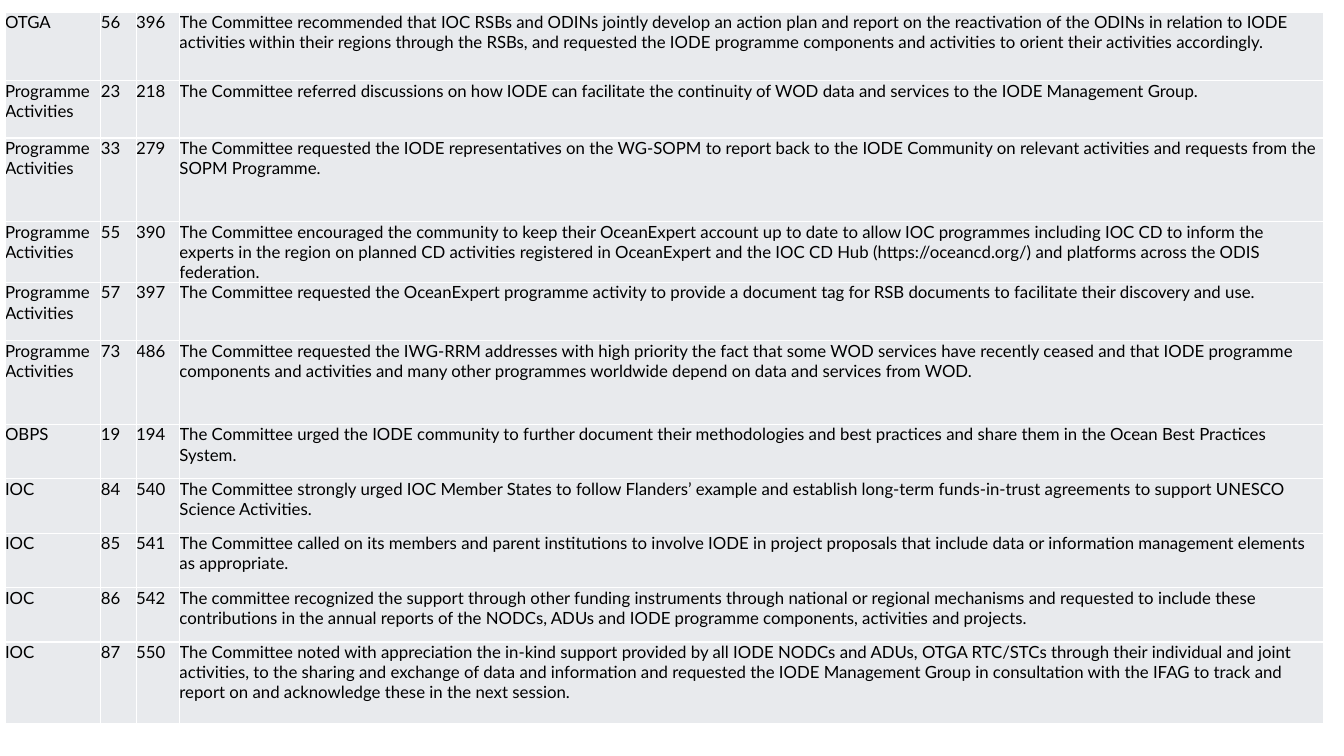
from lxml.etree import SubElement
from pptx import Presentation
from pptx.dml.color import RGBColor
from pptx.oxml.ns import qn
from pptx.util import Inches, Pt

WIDTHS = [0.95, 0.35, 0.43, 11.35]
ACTS = "Programme Activities"

# Row height, component, section, paragraph, decision
ROWS = [
    (0.68, "OTGA", 56, 396, "The Committee recommended that IOC RSBs and ODINs jointly develop an action plan and report on the reactivation of the ODINs in relation to IODE activities within their regions through the RSBs, and requested the IODE programme components and activities to orient their activities accordingly."),
    (0.57, ACTS, 23, 218, "The Committee referred discussions on how IODE can facilitate the continuity of WOD data and services to the IODE Management Group."),
    (0.83, ACTS, 33, 279, "The Committee requested the IODE representatives on the WG-SOPM to report back to the IODE Community on relevant activities and requests from the SOPM Programme."),
    (0.59, ACTS, 55, 390, "The Committee encouraged the community to keep their OceanExpert account up to date to allow IOC programmes including IOC CD to inform the experts in the region on planned CD activities registered in OceanExpert and the IOC CD Hub (https://oceancd.org/) and platforms across the ODIS federation."),
    (0.58, ACTS, 57, 397, "The Committee requested the OceanExpert programme activity to provide a document tag for RSB documents to facilitate their discovery and use."),
    (0.83, ACTS, 73, 486, "The Committee requested the IWG-RRM addresses with high priority the fact that some WOD services have recently ceased and that IODE programme components and activities and many other programmes worldwide depend on data and services from WOD."),
    (0.54, "OBPS", 19, 194, "The Committee urged the IODE community to further document their methodologies and best practices and share them in the Ocean Best Practices System."),
    (0.54, "IOC", 84, 540, "The Committee strongly urged IOC Member States to follow Flanders’ example and establish long-term funds-in-trust agreements to support UNESCO Science Activities."),
    (0.54, "IOC", 85, 541, "The Committee called on its members and parent institutions to involve IODE in project proposals that include data or information management elements as appropriate."),
    (0.54, "IOC", 86, 542, "The committee recognized the support through other funding instruments through national or regional mechanisms and requested to include these contributions in the annual reports of the NODCs, ADUs and IODE programme components, activities and projects."),
    (0.81, "IOC", 87, 550, "The Committee noted with appreciation the in-kind support provided by all IODE NODCs and ADUs, OTGA RTC/STCs through their individual and joint activities, to the sharing and exchange of data and information and requested the IODE Management Group in consultation with the IFAG to track and report on and acknowledge these in the next session."),
]


def paint(color, code):
    color.rgb = RGBColor.from_string(code)


def set_edges(cell, code):
    """Draw a 1 pt line on all four sides; call before filling the cell."""
    props = cell._tc.get_or_add_tcPr()
    for side in ("a:lnL", "a:lnR", "a:lnT", "a:lnB"):
        line = SubElement(props, qn(side), w=str(Pt(1)))
        fill = SubElement(line, qn("a:solidFill"))
        SubElement(fill, qn("a:srgbClr"), val=code)


deck = Presentation()
deck.slide_width, deck.slide_height = Inches(13.33), Inches(7.5)
slide = deck.slides.add_slide(deck.slide_layouts[6])

table = slide.shapes.add_table(
    len(ROWS), len(WIDTHS), Inches(0.05), Inches(0.12),
    Inches(sum(WIDTHS)), Inches(sum(row[0] for row in ROWS))).table
table.first_row = table.horz_banding = False
for column, width in zip(table.columns, WIDTHS):
    column.width = Inches(width)

for row, (height, *values) in zip(table.rows, ROWS):
    row.height = Inches(height)
    for cell, value in zip(row.cells, values):
        cell.margin_left = cell.margin_right = 0
        cell.margin_top = cell.margin_bottom = 0
        set_edges(cell, "FFFFFF")
        cell.fill.solid()
        paint(cell.fill.fore_color, "E8EAED")
        cell.text = str(value)
        font = cell.text_frame.paragraphs[0].font
        font.name, font.size = "Lato", Pt(12)
        paint(font.color, "000000")

deck.save("out.pptx")
